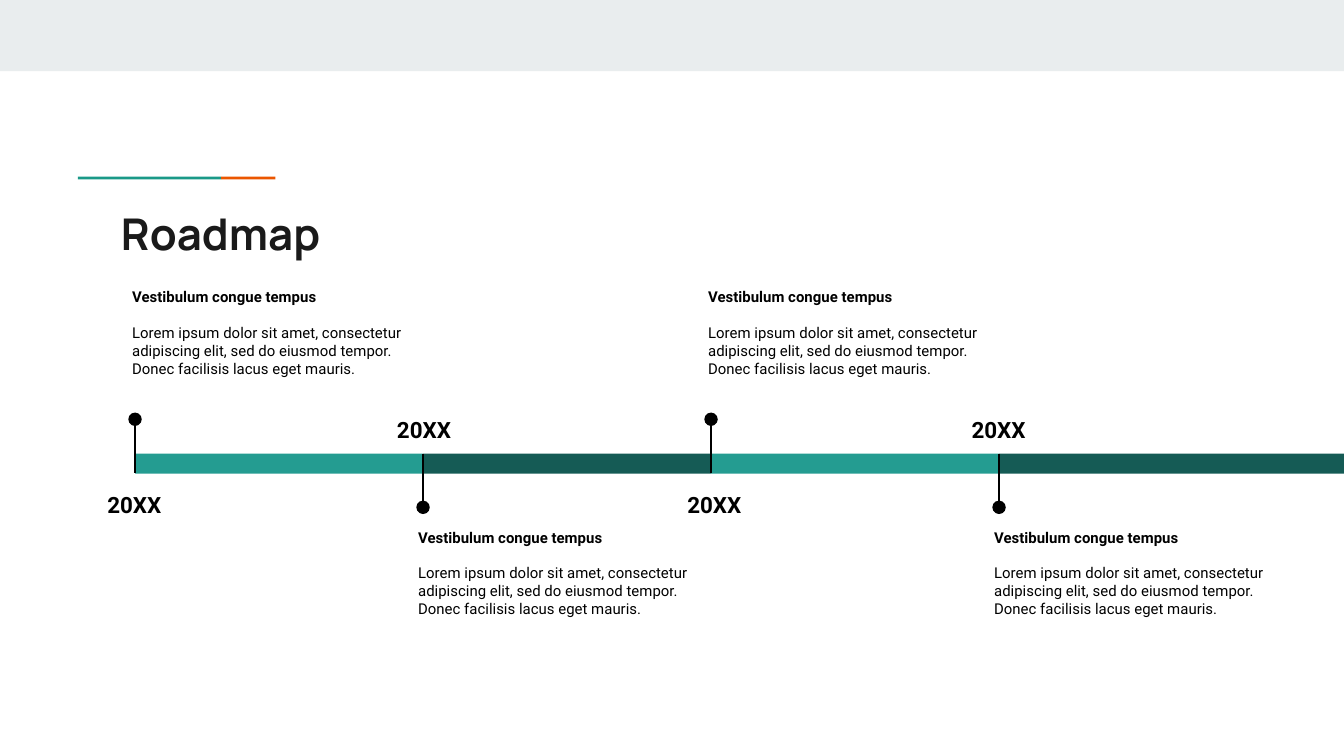
from lxml.etree import SubElement
from pptx import Presentation
from pptx.dml.color import RGBColor
from pptx.enum.shapes import MSO_CONNECTOR, MSO_SHAPE
from pptx.enum.text import MSO_ANCHOR, MSO_AUTO_SIZE, PP_ALIGN
from pptx.oxml.ns import qn
from pptx.util import Inches, Pt

COLUMNS = 100
ROWS = COLUMNS * 9 / 16
CELL = 0.1  # inches per grid column and row

BLACK, INK, MIST = "000000", "1A1A1A", "E9EDEE"
TEAL, ORANGE = "1A9988", "EB5600"
BAR_COLOURS = ("249C91", "155B55")

HEADING = "Vestibulum congue tempus"
BODY = ("Lorem ipsum dolor sit amet, consectetur adipiscing elit, "
        "sed do eiusmod tempor. Donec facilisis lacus eget mauris.")
MILESTONES = [("20XX", 10), ("20XX", 31.55), ("20XX", 53.15), ("20XX", 74.3)]

FIRST_NODE, STEP = 10.05, 21.43
BAR_TOP, BAR_HEIGHT = 33.75, 1.5
DOT = 1


def colour(value):
    return RGBColor.from_string(value)


def grid(*cells):
    return [Inches(cell * CELL) for cell in cells]


class RoadmapSlide:
    """Holds the text style and the slide being built; lengths are grid cells."""

    title_font, text_font = "Manrope", "Roboto"

    def __init__(self, deck):
        self.slide = deck.slides.add_slide(deck.slide_layouts[5])
        self.shapes = self.slide.shapes

    def style(self, para, font, size, ink, bold):
        for span in para.runs:
            span.font.name = font
            span.font.size = Pt(size)
            span.font.bold = bold
            span.font.color.rgb = colour(ink)

    def frame(self, box):
        """Give a text shape equal insets, wrapping and a top anchor."""
        frame = box.text_frame
        frame.word_wrap = True
        frame.auto_size = MSO_AUTO_SIZE.NONE
        frame.vertical_anchor = MSO_ANCHOR.TOP
        frame.margin_left = frame.margin_right = Inches(0.1)
        frame.margin_top = frame.margin_bottom = Inches(0.1)
        return frame

    def title(self, text, *place):
        box = self.shapes.title
        box.left, box.top, box.width, box.height = grid(*place)
        frame = self.frame(box)
        frame.text = text
        para = frame.paragraphs[0]
        para.alignment = PP_ALIGN.LEFT
        self.style(para, self.title_font, 23.4, INK, True)

    def shape(self, fill, *place, kind=MSO_SHAPE.RECTANGLE):
        shape = self.shapes.add_shape(kind, *grid(*place))
        shape.shadow.inherit = False
        shape.fill.solid()
        shape.fill.fore_color.rgb = colour(fill)
        shape.line.fill.background()

    def stem(self, x, start, end):
        line = self.shapes.add_connector(MSO_CONNECTOR.STRAIGHT, *grid(x, start, x, end))
        line.line.color.rgb = colour(BLACK)
        line.line.width = Pt(0.75)
        SubElement(line._element.spPr, qn("a:effectLst"))

    def year(self, text, centre, top):
        width = 8.2
        box = self.shapes.add_textbox(*grid(centre - width / 2, top, width, 4.1))
        frame = self.frame(box)
        frame.text = text
        para = frame.paragraphs[0]
        para.alignment = PP_ALIGN.CENTER
        para.line_spacing = 1.15
        self.style(para, self.text_font, 12, BLACK, True)

    def blurb(self, left, top):
        frame = self.frame(self.shapes.add_textbox(*grid(left, top, 24.6, 10.3)))
        frame.text = f"{HEADING}\n{BODY}"
        heading, body = frame.paragraphs
        heading.space_after = Pt(9.6)
        self.style(heading, self.text_font, 8, BLACK, True)
        self.style(body, self.text_font, 8, BLACK, False)

    def milestone(self, index, year, year_centre):
        """Draw one bar with its pin; even ones point up, odd ones down."""
        node = FIRST_NODE + index * STEP
        last = index == len(MILESTONES) - 1
        width = COLUMNS - node if last else STEP
        self.shape(BAR_COLOURS[index % 2], node, BAR_TOP, width, BAR_HEIGHT)
        if index % 2 == 0:
            stem, dot_top, year_top, blurb = (31.3, 35.2), 30.7, 35.25, (node - 1.2, 20.4)
        else:
            stem, dot_top, year_top, blurb = (37.7, 33.8), 37.25, 29.65, (node - 1.35, 38.3)
        self.stem(node, *stem)
        self.shape(BLACK, node - DOT / 2, dot_top, DOT, DOT, kind=MSO_SHAPE.OVAL)
        self.year(year, year_centre, year_top)
        self.blurb(*blurb)


def main():
    deck = Presentation()
    deck.slide_width, deck.slide_height = grid(COLUMNS, ROWS)
    roadmap = RoadmapSlide(deck)
    roadmap.shape(MIST, 0, 0, COLUMNS, 5.3)
    roadmap.shape(TEAL, 5.8, 13.15, 10.65, 0.2)
    roadmap.shape(ORANGE, 16.45, 13.15, 4.05, 0.2)
    roadmap.title("Roadmap", 8, 14.4, 84.1, 5.9)
    for index, (year, year_centre) in enumerate(MILESTONES):
        roadmap.milestone(index, year, year_centre)
    deck.save("out.pptx")


if __name__ == "__main__":
    main()
